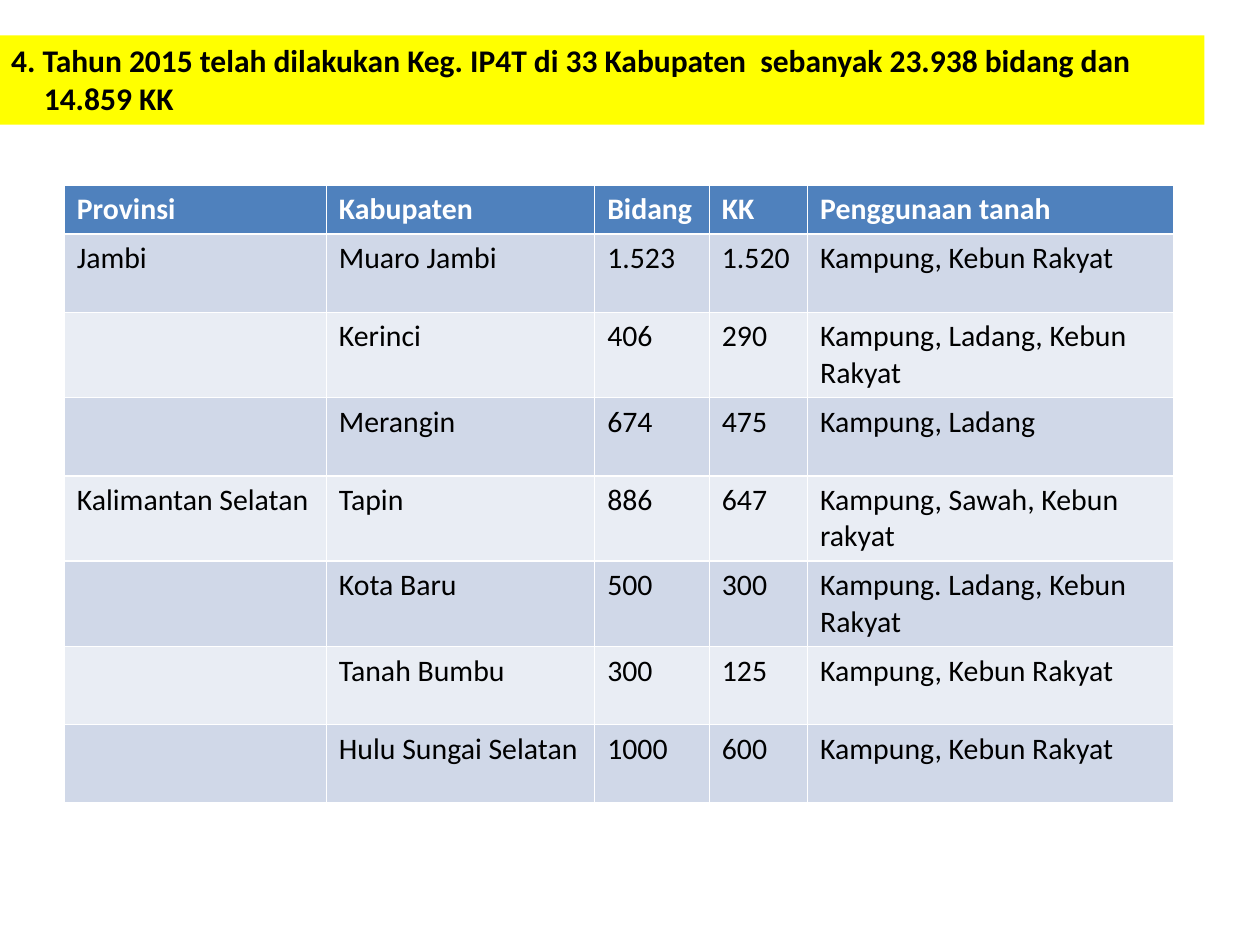
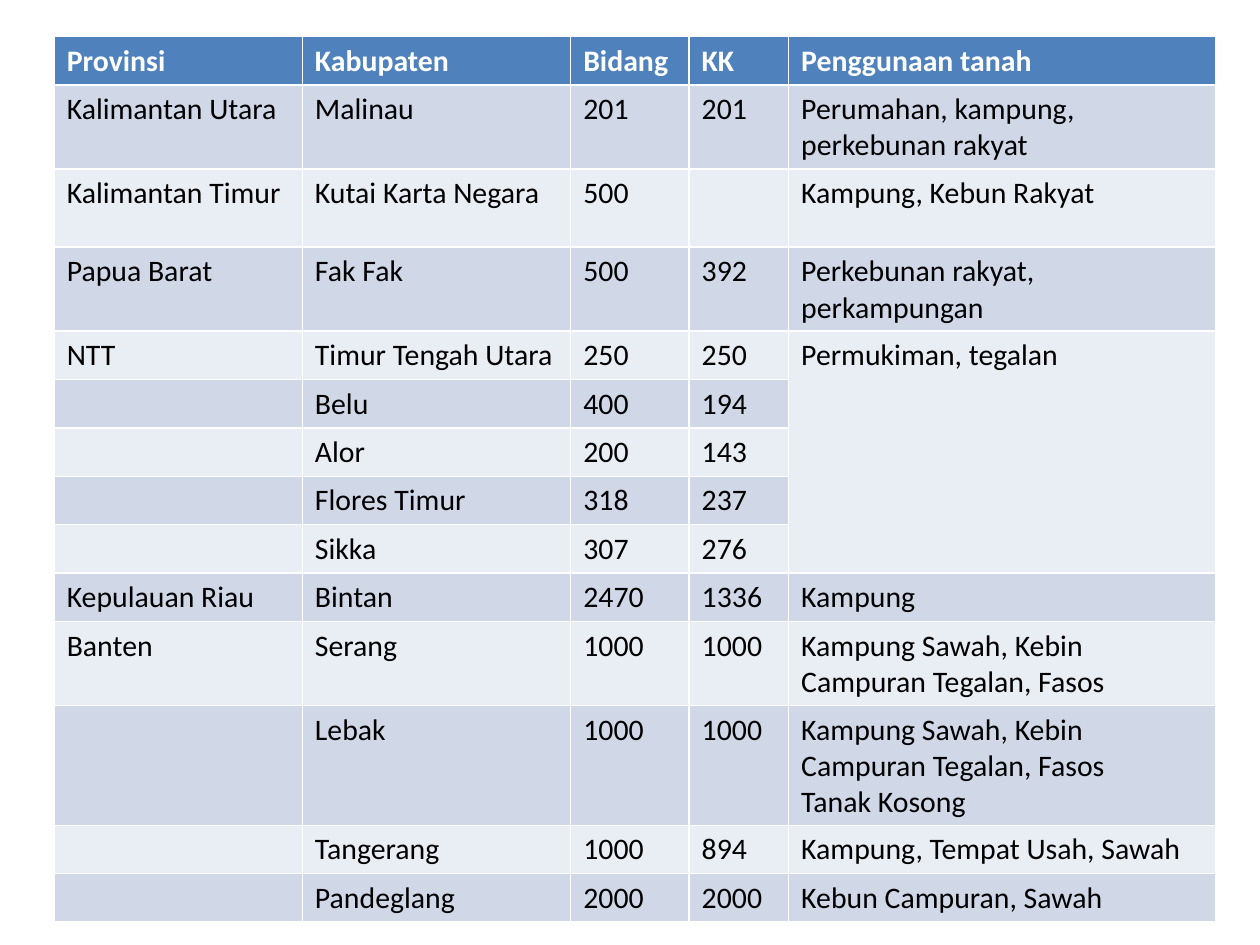
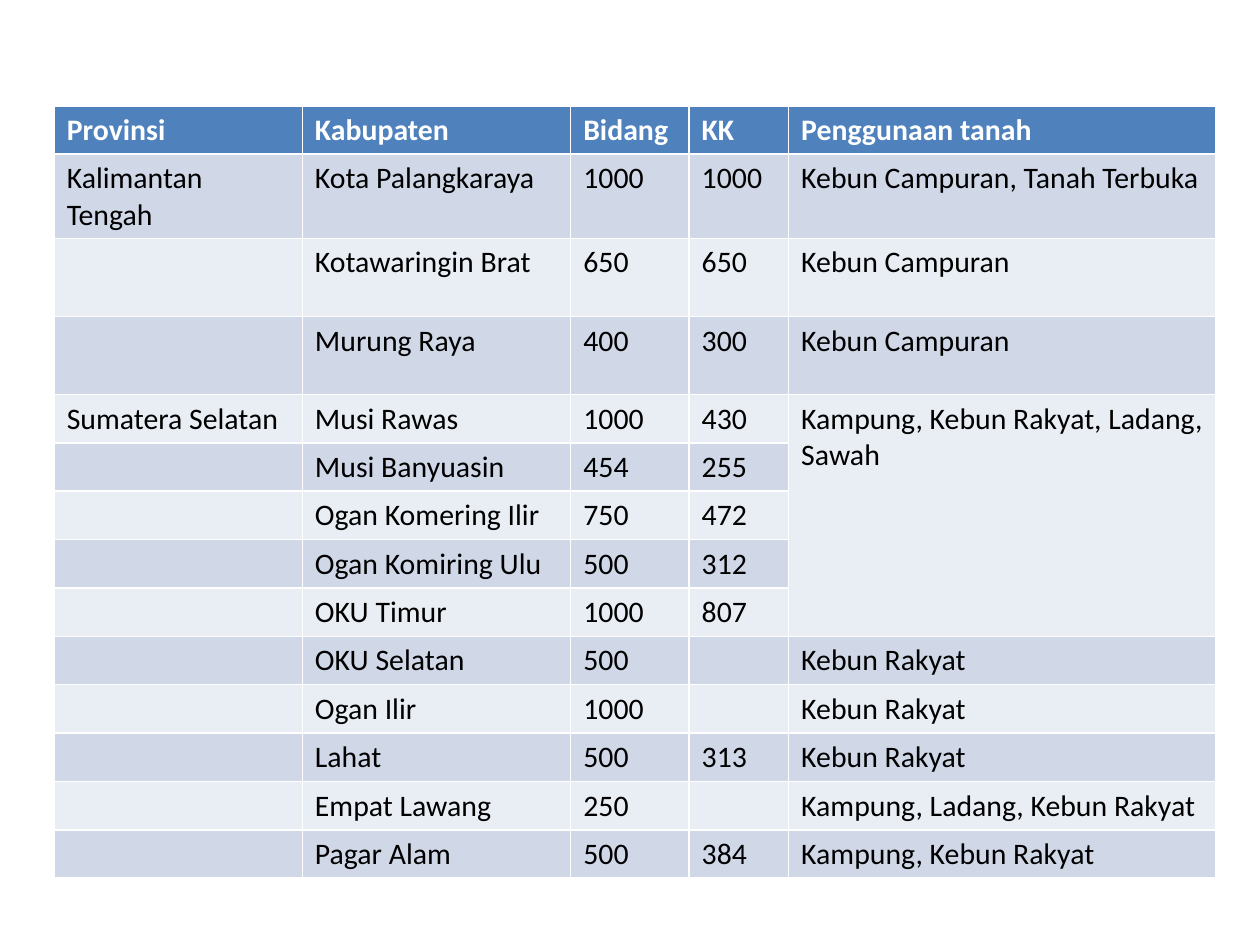
from lxml.etree import SubElement
from pptx import Presentation
from pptx.dml.color import RGBColor
from pptx.enum.shapes import MSO_SHAPE
from pptx.enum.text import MSO_ANCHOR, MSO_AUTO_SIZE, PP_ALIGN
from pptx.oxml.ns import qn
from pptx.util import Inches, Pt

# Shared look
FONT = "Calibri"
BLACK, WHITE, YELLOW = "000000", "FFFFFF", "FFFF00"
HEADER_BLUE = "4F81BD"
BANDS = ["E9EDF4", "D0D8E8"]
TABLE_SIZE, HEADING_SIZE = 17, 18
LOW_ROW, HIGH_ROW = 0.36, 0.62
HEADER = ("Provinsi", "Kabupaten", "Bidang", "KK", "Penggunaan tanah")
WIDE_COLUMNS = [1.97, 2.13, 0.94, 0.79, 3.39]


def color(hex_code):
    return RGBColor.from_string(hex_code)


def add_text(paragraph, text, size, hex_code, bold):
    run = paragraph.add_run()
    run.text = text
    run.font.name = FONT
    run.font.size = Pt(size)
    run.font.bold = bold
    run.font.color.rgb = color(hex_code)


# Content: a land use of None continues the cell above it
jambi_kalsel = [
    ("Jambi", "Muaro Jambi", "1.523", "1.520", "Kampung, Kebun Rakyat"),
    ("", "Kerinci", "406", "290", "Kampung, Ladang, Kebun Rakyat"),
    ("", "Merangin", "674", "475", "Kampung, Ladang"),
    ("Kalimantan Selatan", "Tapin", "886", "647", "Kampung, Sawah, Kebun rakyat"),
    ("", "Kota Baru", "500", "300", "Kampung. Ladang, Kebun Rakyat"),
    ("", "Tanah Bumbu", "300", "125", "Kampung, Kebun Rakyat"),
    ("", "Hulu Sungai Selatan", "1000", "600", "Kampung, Kebun Rakyat"),
]
kaltara_banten = [
    ("Kalimantan Utara", "Malinau", "201", "201", "Perumahan, kampung, perkebunan rakyat"),
    ("Kalimantan Timur", "Kutai Karta Negara", "500", "", "Kampung, Kebun Rakyat"),
    ("Papua Barat", "Fak Fak", "500", "392", "Perkebunan rakyat, perkampungan"),
    ("NTT", "Timur Tengah Utara", "250", "250", "Permukiman, tegalan"),
    ("", "Belu", "400", "194", None),
    ("", "Alor", "200", "143", None),
    ("", "Flores Timur", "318", "237", None),
    ("", "Sikka", "307", "276", None),
    ("Kepulauan Riau", "Bintan", "2470", "1336", "Kampung"),
    ("Banten", "Serang", "1000", "1000", "Kampung Sawah, Kebin Campuran Tegalan, Fasos"),
    ("", "Lebak", "1000", "1000", "Kampung Sawah, Kebin Campuran Tegalan, Fasos\nTanak Kosong"),
    ("", "Tangerang", "1000", "894", "Kampung, Tempat Usah, Sawah"),
    ("", "Pandeglang", "2000", "2000", "Kebun Campuran, Sawah"),
]
kalteng_sumsel = [
    ("Kalimantan Tengah", "Kota Palangkaraya", "1000", "1000", "Kebun Campuran, Tanah Terbuka"),
    ("", "Kotawaringin Brat", "650", "650", "Kebun Campuran"),
    ("", "Murung Raya", "400", "300", "Kebun Campuran"),
    ("Sumatera Selatan", "Musi Rawas", "1000", "430", "Kampung, Kebun Rakyat, Ladang, Sawah"),
    ("", "Musi Banyuasin", "454", "255", None),
    ("", "Ogan Komering Ilir", "750", "472", None),
    ("", "Ogan Komiring Ulu", "500", "312", None),
    ("", "OKU Timur", "1000", "807", None),
    ("", "OKU Selatan", "500", "", "Kebun Rakyat"),
    ("", "Ogan Ilir", "1000", "", "Kebun Rakyat"),
    ("", "Lahat", "500", "313", "Kebun Rakyat"),
    ("", "Empat Lawang", "250", "", "Kampung, Ladang, Kebun Rakyat"),
    ("", "Pagar Alam", "500", "384", "Kampung, Kebun Rakyat"),
]

# Left, top, column widths, number of high rows, rows
pages = [
    (0.51, 1.47, [2.08, 2.13, 0.91, 0.78, 2.91], 7, jambi_kalsel),
    (0.43, 0.29, WIDE_COLUMNS, 3, kaltara_banten),
    (0.43, 0.84, WIDE_COLUMNS, 3, kalteng_sumsel),
]

deck = Presentation()
deck.slide_width, deck.slide_height = Inches(10), Inches(7.5)

# One table per slide; the default table style draws the white borders
for left, top, widths, high_rows, districts in pages:
    slide = deck.slides.add_slide(deck.slide_layouts[6])
    rows = [HEADER] + districts
    heights = [HIGH_ROW if 1 <= i <= high_rows else LOW_ROW for i in range(len(rows))]
    table = slide.shapes.add_table(
        len(rows), len(HEADER), Inches(left), Inches(top),
        Inches(sum(widths)), Inches(sum(heights))).table
    for column, width in zip(table.columns, widths):
        column.width = Inches(width)

    for i, (values, height) in enumerate(zip(rows, heights)):
        table.rows[i].height = Inches(height)
        for j, value in enumerate(values):
            cell = table.cell(i, j)
            cell.fill.solid()
            cell.fill.fore_color.rgb = color(BANDS[i % 2] if i else HEADER_BLUE)
            frame = cell.text_frame
            if not value:
                # Keep empty cells from stretching their row
                SubElement(frame.paragraphs[0]._p, qn("a:endParaRPr"), sz=str(TABLE_SIZE * 100))
                continue
            for k, line in enumerate(value.split("\n")):
                paragraph = frame.add_paragraph() if k else frame.paragraphs[0]
                add_text(paragraph, line, TABLE_SIZE, BLACK if i else WHITE, i == 0)

    # Shared land use
    shared = [i for i, values in enumerate(rows) if values[-1] is None]
    if shared:
        table.cell(shared[0] - 1, 4).merge(table.cell(shared[-1], 4))

# Heading band on the first slide
band = deck.slides[0].shapes.add_shape(
    MSO_SHAPE.RECTANGLE, Inches(-0.01), Inches(0.28), Inches(9.57), Inches(0.71))
band.shadow.inherit = False
band.fill.solid()
band.fill.fore_color.rgb = color(YELLOW)
band.line.fill.background()
band.text_frame.word_wrap = True
band.text_frame.auto_size = MSO_AUTO_SIZE.SHAPE_TO_FIT_TEXT
band.text_frame.vertical_anchor = MSO_ANCHOR.TOP
heading = band.text_frame.paragraphs[0]
heading.alignment = PP_ALIGN.LEFT
hanging = heading._p.get_or_add_pPr()
hanging.set("marL", str(Inches(0.26)))
hanging.set("indent", str(Inches(-0.26)))
add_text(heading, "4. Tahun 2015 telah dilakukan Keg. IP4T di 33 Kabupaten  sebanyak "
         "23.938 bidang dan 14.859 KK", HEADING_SIZE, BLACK, True)

deck.save("out.pptx")
